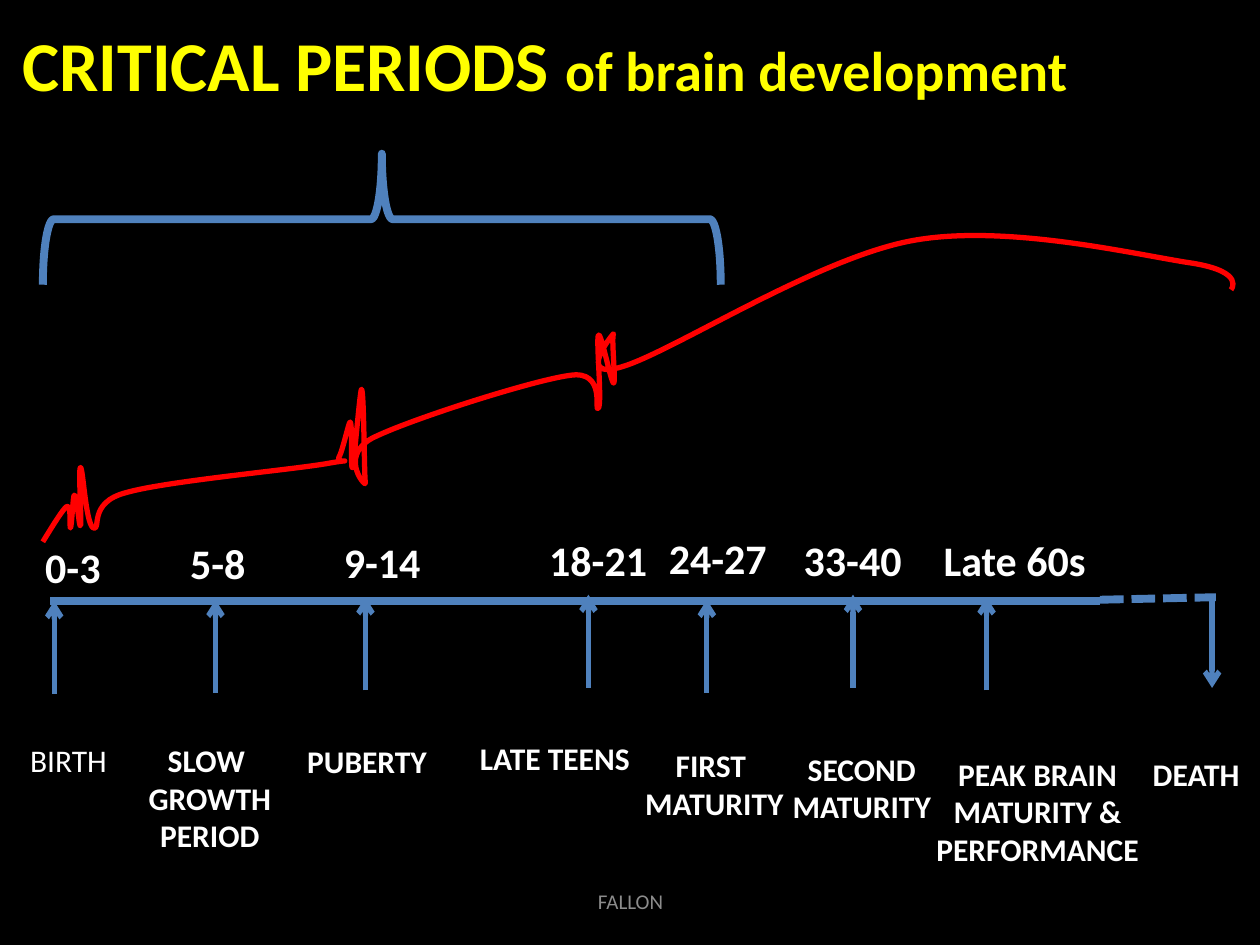
from dataclasses import dataclass
from typing import NamedTuple

from lxml import etree
from pptx import Presentation
from pptx.dml.color import RGBColor
from pptx.enum.dml import MSO_LINE
from pptx.enum.shapes import MSO_CONNECTOR, MSO_SHAPE
from pptx.enum.text import MSO_ANCHOR, MSO_AUTO_SIZE, PP_ALIGN
from pptx.oxml.ns import qn
from pptx.util import Inches, Pt

STRAIGHT = MSO_CONNECTOR.STRAIGHT
LEFT_BRACE = MSO_SHAPE.LEFT_BRACE
DASHED = MSO_LINE.SQUARE_DOT
LEFT, CENTER = PP_ALIGN.LEFT, PP_ALIGN.CENTER
MIDDLE, TOP = MSO_ANCHOR.MIDDLE, MSO_ANCHOR.TOP
FIT_TEXT, FIXED = MSO_AUTO_SIZE.SHAPE_TO_FIT_TEXT, MSO_AUTO_SIZE.NONE


@dataclass(frozen=True)
class Theme:
    font: str = "Calibri"
    background: RGBColor = RGBColor(0x00, 0x00, 0x00)
    title: RGBColor = RGBColor(0xFF, 0xFF, 0x00)
    text: RGBColor = RGBColor(0xFF, 0xFF, 0xFF)
    footer: RGBColor = RGBColor(0x8C, 0x8C, 0x8C)
    axis: RGBColor = RGBColor(0x4F, 0x81, 0xBD)
    curve: RGBColor = RGBColor(0xFF, 0x00, 0x00)
    title_size: int = 40
    subtitle_size: int = 32
    age_size: int = 24
    label_size: int = 18
    footer_size: int = 12
    heavy_line: float = 4.5
    line: float = 3


class Box(NamedTuple):
    left: float
    top: float
    width: float
    height: float


class Span(NamedTuple):
    text: str
    size: int
    color: RGBColor
    bold: bool = True


class Stage(NamedTuple):
    label: list[str]
    label_box: Box
    arrow_x: float
    arrow_top: float
    age: str = ""
    age_box: Box | None = None
    bold: bool = True
    points_down: bool = False


THEME = Theme()
ARROW_LENGTH = 0.74

STAGES = [
    Stage(["BIRTH"], Box(0.14, 5.83, 0.84, 0.4), 0.43, 4.77,
          "0-3", Box(0.26, 4.25, 0.65, 0.5), bold=False),
    Stage(["SLOW ", "GROWTH", "PERIOD"], Box(1.07, 5.83, 1.19, 1.01), 1.71, 4.76,
          "5-8", Box(1.41, 4.22, 0.65, 0.5)),
    Stage(["PUBERTY"], Box(2.34, 5.84, 1.17, 0.4), 2.9, 4.74,
          "9-14", Box(2.63, 4.21, 0.82, 0.5)),
    Stage(["LATE TEENS"], Box(3.71, 5.82, 1.42, 0.4), 4.67, 4.72,
          "18-21", Box(4.26, 4.19, 0.99, 0.5)),
    Stage(["FIRST ", "MATURITY"], Box(5, 5.87, 1.34, 0.71), 5.61, 4.76,
          "24-27", Box(5.21, 4.18, 0.99, 0.5)),
    Stage(["SECOND", "MATURITY"], Box(6.17, 5.9, 1.34, 0.71), 6.77, 4.72,
          "33-40", Box(6.28, 4.19, 0.99, 0.5)),
    Stage(["PEAK BRAIN", "MATURITY &", "PERFORMANCE"], Box(7.32, 5.94, 1.83, 1.01),
          7.83, 4.74, "Late 60s", Box(7.39, 4.19, 1.35, 0.5)),
    Stage(["DEATH"], Box(9.05, 5.94, 0.92, 0.4), 9.62, 4.72, points_down=True),
]

# Each curve row holds two control points and the end point, as x, y pairs
CURVE_START = (0.34, 4.3)
CURVE = [
    (0.42, 4.17, 0.5, 4.04, 0.53, 4.02),
    (0.57, 4, 0.55, 4.2, 0.56, 4.19),
    (0.57, 4.17, 0.58, 3.93, 0.59, 3.93),
    (0.61, 3.92, 0.63, 4.21, 0.64, 4.17),
    (0.65, 4.14, 0.62, 3.71, 0.64, 3.71),
    (0.66, 3.72, 0.68, 4.15, 0.74, 4.19),
    (0.81, 4.22, 0.69, 3.99, 1, 3.91),
    (1.31, 3.82, 2.3, 3.73, 2.59, 3.68),
    (2.87, 3.63, 2.66, 3.69, 2.69, 3.63),
    (2.72, 3.58, 2.77, 3.34, 2.78, 3.35),
    (2.8, 3.37, 2.78, 3.76, 2.8, 3.71),
    (2.81, 3.67, 2.86, 3.07, 2.87, 3.09),
    (2.89, 3.11, 2.89, 3.76, 2.9, 3.83),
    (2.92, 3.89, 2.68, 3.63, 2.95, 3.48),
    (3.22, 3.34, 4.22, 3.02, 4.52, 2.98),
    (4.82, 2.93, 4.71, 3.29, 4.75, 3.24),
    (4.78, 3.19, 4.73, 2.7, 4.75, 2.66),
    (4.77, 2.63, 4.85, 3.04, 4.87, 3.04),
    (4.89, 3.04, 4.85, 2.67, 4.87, 2.65),
    (4.88, 2.63, 4.55, 3.03, 4.94, 2.91),
    (5.34, 2.79, 6.48, 2.05, 7.24, 1.91),
    (7.99, 1.77, 9.05, 2.03, 9.47, 2.09),
    (9.89, 2.16, 9.77, 2.3, 9.77, 2.3),
]


def add_text(slide, box: Box, paragraphs: list[list[Span]], align=LEFT,
             anchor=TOP, wrap: bool = False) -> None:
    frame = slide.shapes.add_textbox(*map(Inches, box)).text_frame
    frame.word_wrap = wrap
    frame.auto_size = FIXED if wrap else FIT_TEXT
    frame.vertical_anchor = anchor
    for index, spans in enumerate(paragraphs):
        paragraph = frame.add_paragraph() if index else frame.paragraphs[0]
        paragraph.alignment = align
        for span in spans:
            run = paragraph.add_run()
            run.text = span.text
            run.font.name = THEME.font
            run.font.size = Pt(span.size)
            run.font.bold = span.bold
            run.font.color.rgb = span.color


def style_line(shape, color: RGBColor, width: float) -> None:
    shape.line.color.rgb = color
    shape.line.width = Pt(width)


def add_line(slide, start: tuple, end: tuple, width: float,
             arrow: bool = False, dashed: bool = False) -> None:
    line = slide.shapes.add_connector(STRAIGHT, *map(Inches, start + end))
    style_line(line, THEME.axis, width)
    if dashed:
        line.line.dash_style = DASHED
    properties = line._element.spPr
    if arrow:
        etree.SubElement(properties.find(qn("a:ln")), qn("a:tailEnd"), type="arrow")
    etree.SubElement(properties, qn("a:effectLst"))


def add_curve(slide, start: tuple, segments: list[tuple]) -> None:
    builder = slide.shapes.build_freeform(Inches(start[0]), Inches(start[1]))
    ends = [(Inches(x), Inches(y)) for *_, x, y in segments]
    builder.add_line_segments(ends, close=False)
    curve = builder.convert_to_shape()
    curve.fill.background()
    curve.shadow.inherit = False
    style_line(curve, THEME.curve, THEME.line)
    # Turn every straight segment into a cubic one
    straight = list(curve._element.iter(qn("a:lnTo")))
    for node, values in zip(straight, segments):
        node.clear()
        bend = etree.Element(qn("a:cubicBezTo"))
        for x, y in zip(values[::2], values[1::2]):
            etree.SubElement(bend, qn("a:pt"), x=str(Inches(x) - curve.left),
                             y=str(Inches(y) - curve.top))
        node.getparent().replace(node, bend)


def add_stage(slide, stage: Stage) -> None:
    top = (stage.arrow_x, stage.arrow_top)
    bottom = (stage.arrow_x, stage.arrow_top + ARROW_LENGTH)
    start, end = (top, bottom) if stage.points_down else (bottom, top)
    add_line(slide, start, end, THEME.line, arrow=True)
    lines = [[Span(text, THEME.label_size, THEME.text, stage.bold)] for text in stage.label]
    add_text(slide, stage.label_box, lines, CENTER if len(lines) > 1 else LEFT)
    if stage.age_box:
        add_text(slide, stage.age_box, [[Span(stage.age, THEME.age_size, THEME.text)]])


def main() -> None:
    deck = Presentation()
    deck.slide_width, deck.slide_height = Inches(10), Inches(7.5)
    slide = deck.slides.add_slide(deck.slide_layouts[6])
    slide.background.fill.solid()
    slide.background.fill.fore_color.rgb = THEME.background

    # Title
    add_text(slide, Box(0.08, 0.12, 8.6, 0.77), [[
        Span("CRITICAL PERIODS ", THEME.title_size, THEME.title),
        Span("of brain development", THEME.subtitle_size, THEME.title)]])

    # Life line with its stages
    add_line(slide, (0.4, 4.77), (8.73, 4.77), THEME.heavy_line)
    add_line(slide, (8.73, 4.76), (9.65, 4.74), THEME.heavy_line, dashed=True)
    for stage in STAGES:
        add_stage(slide, stage)

    # Development curve
    add_curve(slide, CURVE_START, CURVE)

    # Footer
    add_text(slide, Box(3.42, 6.95, 3.17, 0.4),
             [[Span("FALLON", THEME.footer_size, THEME.footer, False)]],
             CENTER, MIDDLE, wrap=True)

    # Brace over the critical years
    brace = slide.shapes.add_shape(LEFT_BRACE, *map(Inches, Box(2.51, -0.95, 1.04, 5.38)))
    brace.rotation = 90
    brace.fill.background()
    brace.shadow.inherit = False
    style_line(brace, THEME.axis, THEME.heavy_line)

    deck.save("out.pptx")


if __name__ == "__main__":
    main()
